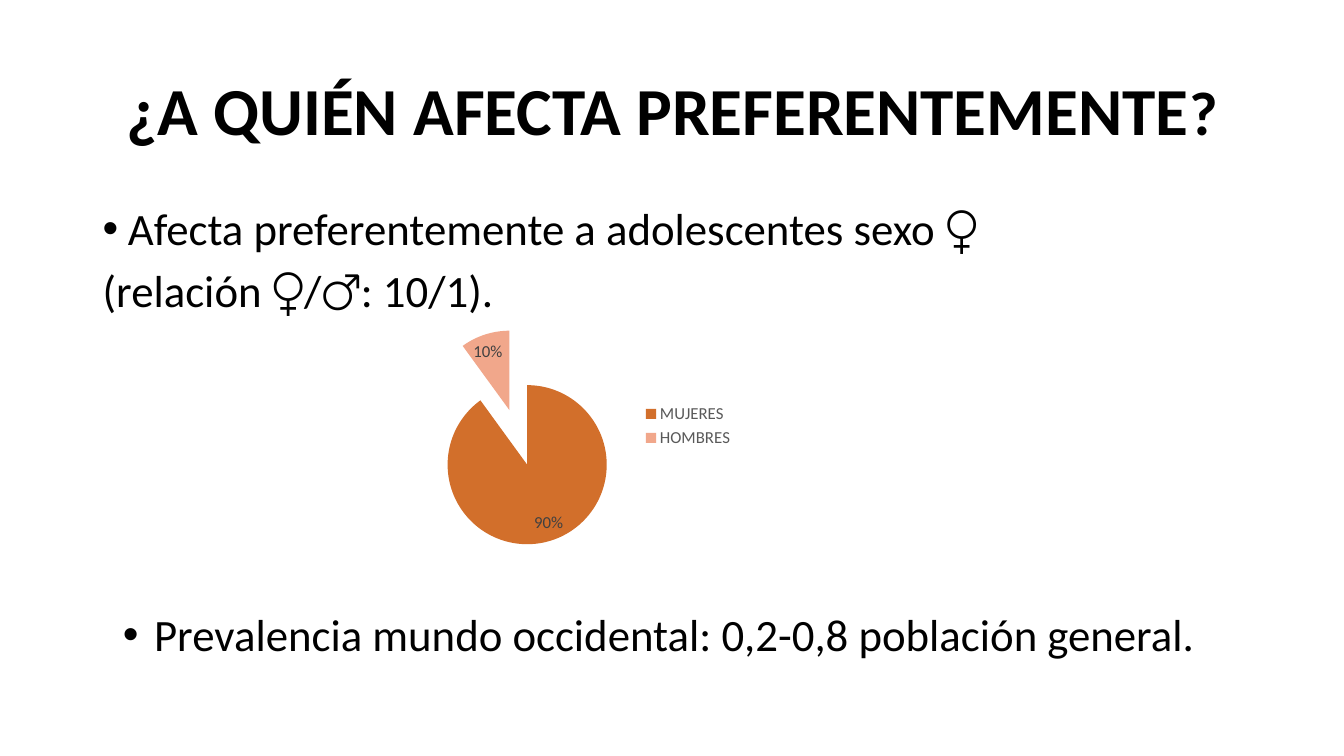
from dataclasses import dataclass

from lxml.etree import SubElement
from pptx import Presentation
from pptx.chart.data import CategoryChartData
from pptx.dml.color import RGBColor
from pptx.enum.chart import XL_CHART_TYPE, XL_LABEL_POSITION, XL_LEGEND_POSITION
from pptx.enum.text import MSO_ANCHOR, PP_ALIGN
from pptx.oxml.ns import qn
from pptx.util import Inches, Pt


@dataclass(frozen=True)
class Theme:
    font: str = "Calibri"
    ink: RGBColor = RGBColor(0x00, 0x00, 0x00)
    legend: RGBColor = RGBColor(0x59, 0x59, 0x59)
    label: RGBColor = RGBColor(0x40, 0x40, 0x40)
    women: RGBColor = RGBColor(0xD2, 0x6F, 0x2B)
    men: RGBColor = RGBColor(0xF1, 0xA7, 0x8B)
    title_size: int = 48
    mark_size: int = 44
    body_size: int = 32
    chart_size: int = 12


@dataclass(frozen=True)
class Line:
    text: str
    size: int
    bold: bool = False
    align: PP_ALIGN = PP_ALIGN.LEFT
    bullet_indent: float = 0
    spacing: float = 0.9
    before: int = 0


@dataclass(frozen=True)
class Block:
    left: float
    top: float
    width: float
    height: float
    anchor: MSO_ANCHOR
    lines: tuple[Line, ...]


@dataclass(frozen=True)
class Slice:
    name: str
    share: float
    color: RGBColor


THEME = Theme()

BLOCKS = (
    Block(0.92, 0.4, 11.5, 1.45, MSO_ANCHOR.MIDDLE, (
        Line("¿A QUIÉN AFECTA PREFERENTEMENTE", THEME.title_size, True, PP_ALIGN.CENTER),
    )),
    Block(0.92, 2, 11.5, 4.76, MSO_ANCHOR.TOP, (
        Line("Afecta preferentemente a adolescentes sexo ♀", THEME.body_size,
             bullet_indent=0.25, before=10),
        Line("(relación ♀/♂: 10/1).", THEME.body_size, before=10),
    )),
    Block(1.12, 5.42, 10.95, 1.18, MSO_ANCHOR.BOTTOM, (
        Line("Prevalencia mundo occidental: 0,2-0,8 población general.", THEME.body_size,
             bullet_indent=0.31, spacing=1),
    )),
)

SLICES = (Slice("MUJERES", 0.9, THEME.women), Slice("HOMBRES", 0.1, THEME.men))


def style_font(font, size: int, color: RGBColor, bold: bool = False) -> None:
    font.name = THEME.font
    font.size = Pt(size)
    font.bold = bold
    font.color.rgb = color


def add_bullet(p, indent: float) -> None:
    pPr = p._p.get_or_add_pPr()
    pPr.set("marL", str(Inches(indent)))
    pPr.set("indent", str(-Inches(indent)))
    SubElement(pPr, qn("a:buFont")).set("typeface", "Arial")
    SubElement(pPr, qn("a:buChar")).set("char", "•")


def add_block(slide, block: Block):
    box = slide.shapes.add_textbox(Inches(block.left), Inches(block.top),
                                   Inches(block.width), Inches(block.height))
    tf = box.text_frame
    tf.word_wrap = True
    tf.vertical_anchor = block.anchor
    for i, line in enumerate(block.lines):
        p = tf.add_paragraph() if i else tf.paragraphs[0]
        p.text = line.text
        p.alignment = line.align
        p.line_spacing = line.spacing
        p.space_before = Pt(line.before)
        style_font(p.runs[0].font, line.size, THEME.ink, line.bold)
        if line.bullet_indent:
            add_bullet(p, line.bullet_indent)
    return box


def add_pie(slide, slices: tuple[Slice, ...]) -> None:
    data = CategoryChartData(number_format="0%")
    data.categories = [s.name for s in slices]
    data.add_series("Series 1", [s.share for s in slices])
    chart = slide.shapes.add_chart(XL_CHART_TYPE.PIE, Inches(3.93), Inches(2.83),
                                   Inches(3.45), Inches(2.79), data).chart
    style_font(chart.font, 10, THEME.ink)
    chart.has_title = False

    # Legend
    chart.has_legend = True
    chart.legend.position = XL_LEGEND_POSITION.RIGHT
    chart.legend.include_in_layout = False
    style_font(chart.legend.font, THEME.chart_size, THEME.legend)

    # Slices, pulled apart
    plot = chart.plots[0]
    plot.vary_by_categories = True
    series = plot.series[0]
    for i, s in enumerate(slices):
        fill = series.points[i].format.fill
        fill.solid()
        fill.fore_color.rgb = s.color
    explosion = series._element.makeelement(qn("c:explosion"), {"val": "36"})
    series._element.find(qn("c:dPt")).addprevious(explosion)

    # Value labels
    labels = series.data_labels
    labels.show_value = True
    labels.show_percentage = False
    labels.number_format = "0%"
    labels.number_format_is_linked = False
    labels.position = XL_LABEL_POSITION.BEST_FIT
    style_font(labels.font, THEME.chart_size, THEME.label)


def main() -> None:
    prs = Presentation()
    prs.slide_width, prs.slide_height = Inches(13.33), Inches(7.5)
    slide = prs.slides.add_slide(prs.slide_layouts[6])

    # Title and body text
    title, *_ = [add_block(slide, block) for block in BLOCKS]

    # Smaller closing mark of the title
    r = title.text_frame.paragraphs[0].add_run()
    r.text = "?"
    style_font(r.font, THEME.mark_size, THEME.ink, bold=True)

    # Share of women and men
    add_pie(slide, SLICES)

    prs.save("out.pptx")


if __name__ == "__main__":
    main()
